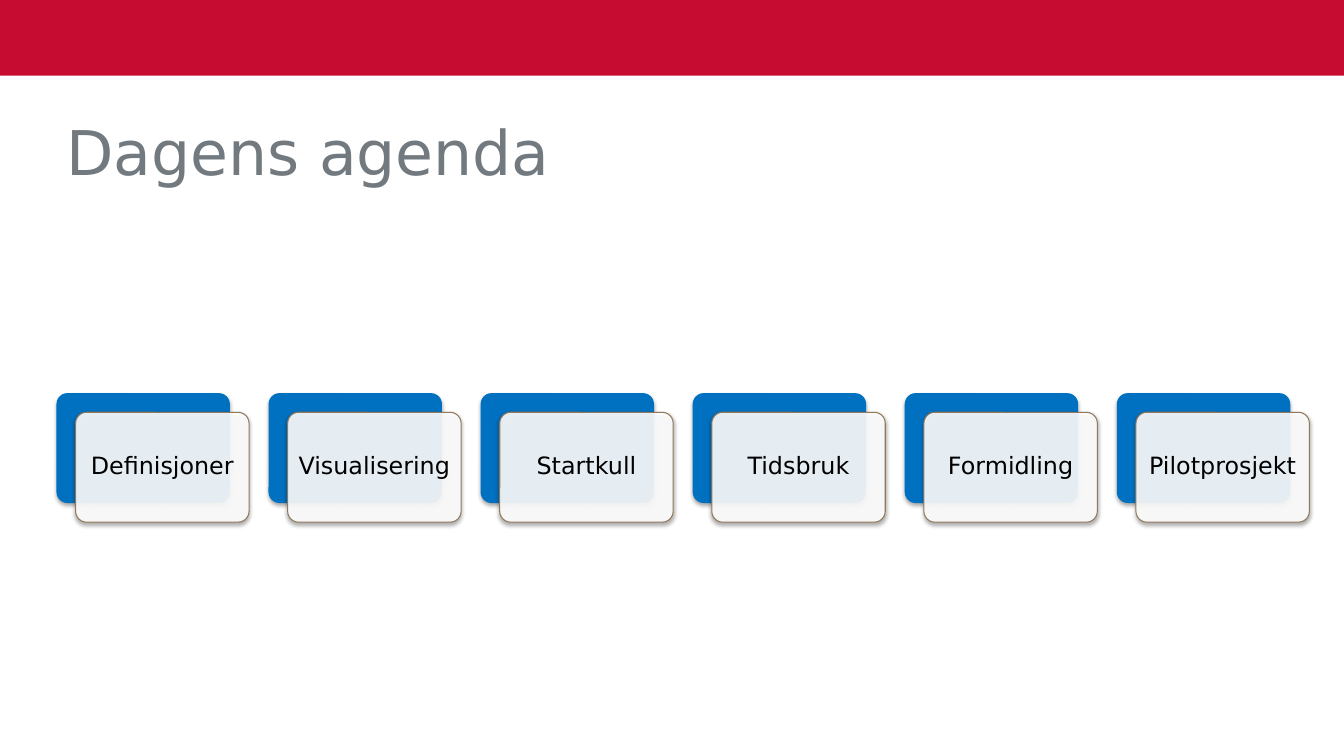
import pptx
import pptx.util
import pptx.dml.color
import pptx.enum.shapes
import pptx.enum.text
import pptx.oxml
import pptx.oxml.ns

Inches = pptx.util.Inches
Pt = pptx.util.Pt
RGBColor = pptx.dml.color.RGBColor
MSO_SHAPE = pptx.enum.shapes.MSO_SHAPE
MSO_ANCHOR = pptx.enum.text.MSO_ANCHOR
PP_ALIGN = pptx.enum.text.PP_ALIGN

RED = RGBColor(0xC6, 0x0C, 0x30)
GREY = RGBColor(0x72, 0x7A, 0x7F)
BLUE = RGBColor(0x00, 0x70, 0xC0)
BROWN = RGBColor(0x91, 0x78, 0x5B)
WHITE = RGBColor(0xFF, 0xFF, 0xFF)
BLACK = RGBColor(0x00, 0x00, 0x00)

WIDTH, HEIGHT = 13.33, 7.5
TOPICS = ["Definisjoner", "Visualisering", "Startkull",
          "Tidsbruk", "Formidling", "Pilotprosjekt"]

# The topic row: equal columns, each holding a plate and a card offset from it
GRID_LEFT, GRID_TOP = 0.56, 3.9
OFFSET = 0.19
COLUMN = (12.99 + OFFSET - GRID_LEFT) / len(TOPICS)
CARD_WIDTH, CARD_HEIGHT = 1.72, 1.09

SHADOW = (
    '<a:effectLst xmlns:a="http://schemas.openxmlformats.org/drawingml/2006/main">'
    f'<a:outerShdw blurRad="{Pt(3.1)}" dist="{Pt(1.8)}" dir="5400000" rotWithShape="0">'
    '<a:srgbClr val="000000"><a:alpha val="35000"/></a:srgbClr>'
    '</a:outerShdw></a:effectLst>'
)


class AgendaSlide:
    def __init__(self, prs, font):
        self.font = font
        self.s = prs.slides.add_slide(prs.slide_layouts[6])

    def set_text(self, sp, text, size, color, align, anchor, inset=0.1):
        tf = sp.text_frame
        tf.word_wrap = True
        tf.vertical_anchor = anchor
        tf.margin_left = tf.margin_right = Inches(inset)
        tf.margin_top = tf.margin_bottom = Inches(0.05)
        p = tf.paragraphs[0]
        p.text = text
        p.alignment = align
        p.line_spacing = 0.9
        p.font.name = self.font
        p.font.size = Pt(size)
        p.font.color.rgb = color

    def box(self, kind, left, top, width, height, fill):
        sp = self.s.shapes.add_shape(
            kind, Inches(left), Inches(top), Inches(width), Inches(height))
        sp.shadow.inherit = False
        sp.fill.solid()
        sp.fill.fore_color.rgb = fill
        sp.line.fill.background()
        return sp

    def bar(self, share):
        """Fill the given share of the slide's height, across the top."""
        self.box(MSO_SHAPE.RECTANGLE, 0, 0, WIDTH, HEIGHT * share, RED)

    def title(self, text):
        sp = self.s.shapes.add_textbox(
            Inches(GRID_LEFT), Inches(1), Inches(12.44), Inches(0.92))
        self.set_text(sp, text, 44, GREY, PP_ALIGN.LEFT, MSO_ANCHOR.BOTTOM)

    def raised_box(self, column, offset, fill):
        """Add a rounded, shadowed box, shifted down and right by offset."""
        sp = self.box(MSO_SHAPE.ROUNDED_RECTANGLE,
                      GRID_LEFT + column * COLUMN + offset, GRID_TOP + offset,
                      CARD_WIDTH, CARD_HEIGHT, fill)
        sp.adjustments[0] = 0.1
        effects = sp._element.spPr.find(pptx.oxml.ns.qn("a:effectLst"))
        effects.getparent().replace(effects, pptx.oxml.parse_xml(SHADOW))
        return sp

    def topic(self, column, text):
        self.raised_box(column, 0, BLUE)
        card = self.raised_box(column, OFFSET, WHITE)
        color = card._element.spPr.find(".//" + pptx.oxml.ns.qn("a:srgbClr"))
        alpha = color.makeelement(pptx.oxml.ns.qn("a:alpha"), {"val": "90000"})
        color.append(alpha)
        card.line.color.rgb = BROWN
        card.line.width = Pt(0.75)
        self.set_text(card, text, 17, BLACK, PP_ALIGN.CENTER, MSO_ANCHOR.MIDDLE, 0.07)


def main():
    prs = pptx.Presentation()
    prs.slide_width = Inches(WIDTH)
    prs.slide_height = Inches(HEIGHT)
    agenda = AgendaSlide(prs, "DejaVu Sans")
    agenda.bar(0.1)
    agenda.title("Dagens agenda")
    for column, text in enumerate(TOPICS):
        agenda.topic(column, text)
    prs.save("out.pptx")


if __name__ == "__main__":
    main()
